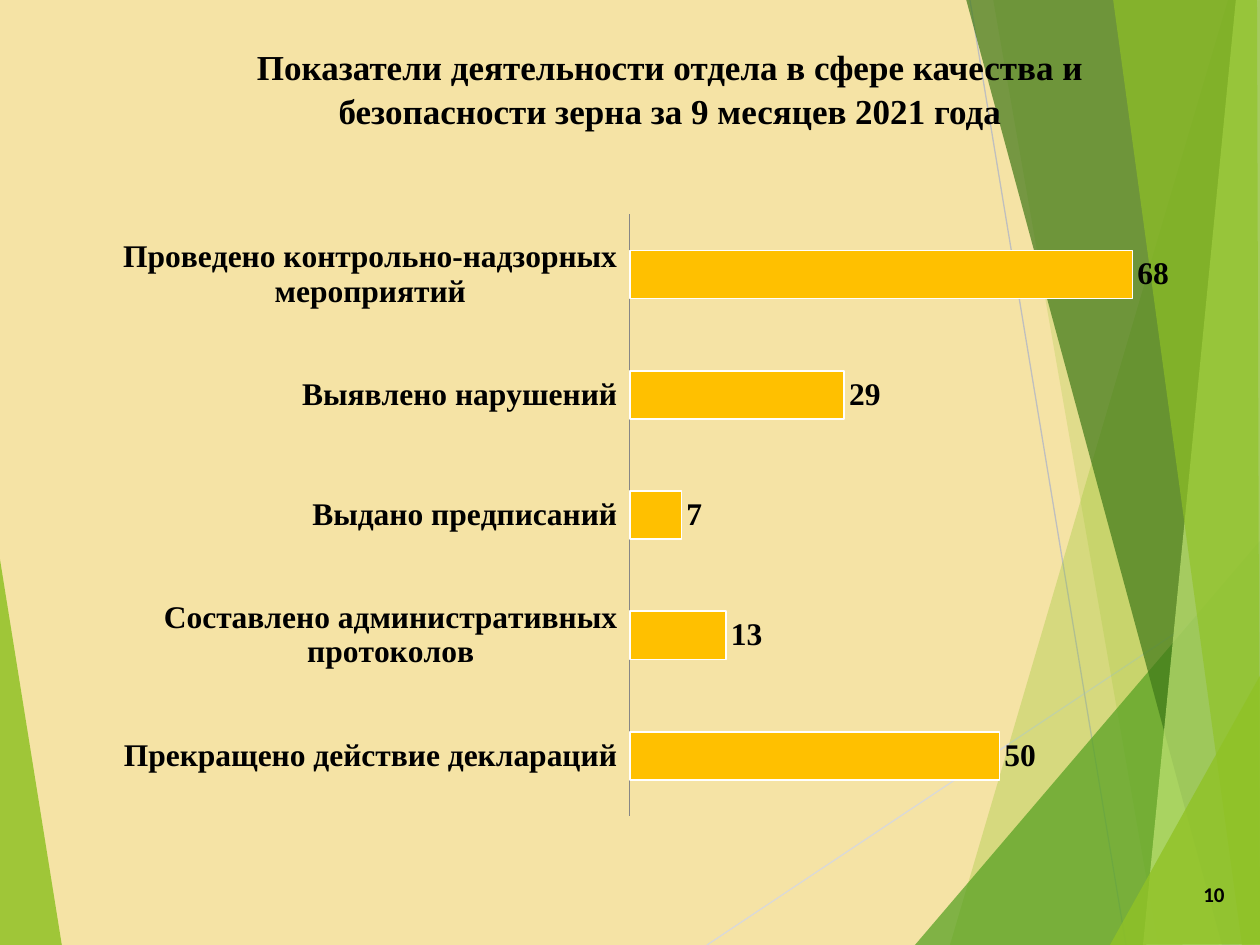
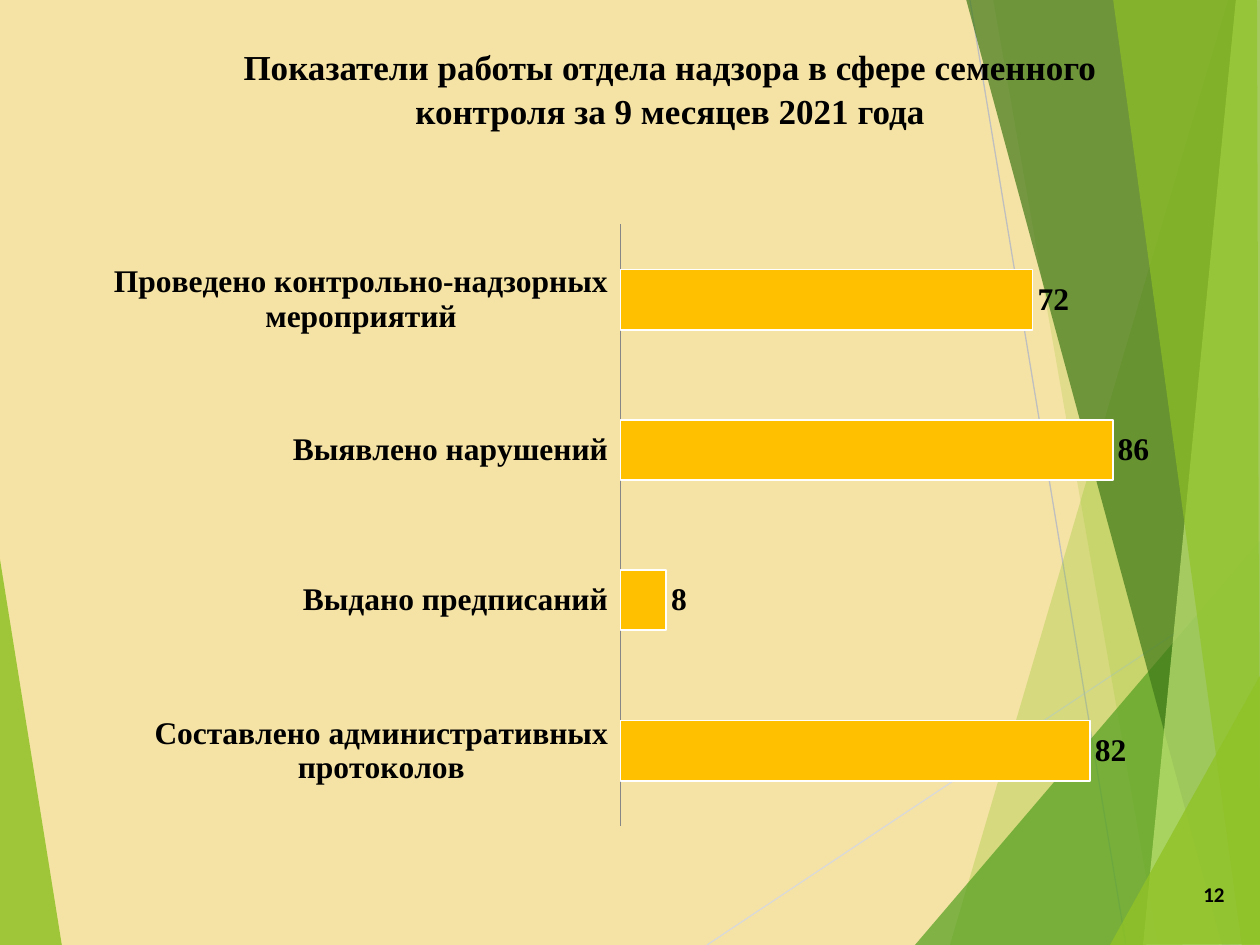
"""Build two slides of bar charts on a backdrop of green facets."""
from dataclasses import dataclass

from lxml import etree
from pptx import Presentation
from pptx.chart.data import CategoryChartData
from pptx.dml.color import RGBColor
from pptx.enum.chart import XL_CHART_TYPE, XL_LABEL_POSITION, XL_TICK_LABEL_POSITION, XL_TICK_MARK
from pptx.enum.shapes import MSO_CONNECTOR
from pptx.enum.text import MSO_ANCHOR, PP_ALIGN
from pptx.oxml import parse_xml
from pptx.oxml.ns import nsdecls, qn
from pptx.util import Pt

BAR = XL_CHART_TYPE.BAR_CLUSTERED
OUTSIDE = XL_LABEL_POSITION.OUTSIDE_END
NO_TICK = XL_TICK_MARK.NONE
LOW = XL_TICK_LABEL_POSITION.LOW
STRAIGHT = MSO_CONNECTOR.STRAIGHT
TOP, MIDDLE = MSO_ANCHOR.TOP, MSO_ANCHOR.MIDDLE
CENTER, RIGHT = PP_ALIGN.CENTER, PP_ALIGN.RIGHT


@dataclass(frozen=True)
class Theme:
    """Colours, fonts and type sizes."""
    background: str = "F5E3A5"
    ink: str = "000000"
    bar: str = "FFC000"
    bar_edge: str = "FFFFFF"
    axis: str = "868686"
    lime: str = "90C226"
    green: str = "54A021"
    forest: str = "3F7819"
    pale: str = "C0E474"
    serif: str = "Times New Roman"
    sans: str = "Calibri"
    title_size: int = 20
    chart_size: int = 18
    number_size: int = 12


THEME = Theme()
PX = 914400 / 126
WIDTH, HEIGHT = 1260, 945
TITLE_BOX = (163, 37, 1014, 185)
NUMBER_BOX = (1166, 869, 71, 50)
PLOT = {"x": 0.497, "y": 0.046, "w": 0.486, "h": 0.94}

INSPECTIONS = "Проведено контрольно-надзорных мероприятий"
VIOLATIONS = "Выявлено нарушений"
ORDERS = "Выдано предписаний"
PROTOCOLS = "Составлено административных протоколов"
DECLARATIONS = "Прекращено действие деклараций"

PAGES = [
    {
        "title": "Показатели деятельности отдела в сфере качества и "
                 "безопасности зерна за 9 месяцев 2021 года",
        "number": "10",
        "box": (25, 185, 1217, 640),
        "maximum": 80,
        "axis_width": 0.75,
        "values": {DECLARATIONS: 50, PROTOCOLS: 13, ORDERS: 7,
                   VIOLATIONS: 29, INSPECTIONS: 68},
    },
    {
        "title": "Показатели работы отдела надзора в сфере семенного "
                 "контроля за 9 месяцев 2021 года",
        "number": "12",
        "box": (35, 195, 1178, 640),
        "maximum": 100,
        "axis_width": 1,
        "values": {PROTOCOLS: 82, ORDERS: 8, VIOLATIONS: 86, INSPECTIONS: 72},
    },
]

LEFT_FACET = (THEME.lime, 85, [(-1, 553), (62, 946), (-1, 945)])
RAYS = [
    ("D9D9D9", (707, 945, 1261, 576)),
    ("BFBFBF", (970, 0, 1126, 945)),
]
RIGHT_FACETS = [
    (THEME.lime, 30, [(1228, 0), (950, 945), (1262, 946), (1261, 1)]),
    (THEME.lime, 20, [(993, -1), (1158, 945), (1261, 945), (1261, -1)]),
    (THEME.green, 72, [(915, 945), (1260, 541), (1261, 945)]),
    (THEME.forest, 70, [(966, -1), (1222, 945), (1261, 944), (1261, -1)]),
    (THEME.pale, 70, [(1236, -1), (1143, 945), (1261, 945), (1260, -1)]),
    (THEME.lime, 65, [(1113, -1), (1242, 945), (1260, 945), (1257, -1)]),
    (THEME.lime, 80, [(1110, 945), (1261, 674), (1261, 944)]),
]


def emu(*lengths):
    return [round(length * PX) for length in lengths]


def paint(fill, color):
    fill.solid()
    fill.fore_color.rgb = RGBColor.from_string(color)


def style_font(font, name, size):
    font.name = name
    font.size = Pt(size)
    font.bold = True
    font.color.rgb = RGBColor.from_string(THEME.ink)


def add_facet(page, color, opacity, points):
    builder = page.shapes.build_freeform(*points[0], scale=PX)
    builder.add_line_segments(points[1:], close=True)
    facet = builder.convert_to_shape()
    facet.shadow.inherit = False
    facet.line.fill.background()
    paint(facet.fill, color)
    tint = facet.fill._xPr.find(".//" + qn("a:srgbClr"))
    etree.SubElement(tint, qn("a:alpha")).set("val", str(opacity * 1000))


def add_ray(page, color, ends):
    ray = page.shapes.add_connector(STRAIGHT, *emu(*ends))
    ray.line.width = Pt(0.75)
    paint(ray.line.fill, color)
    etree.SubElement(ray.element.spPr, qn("a:effectLst"))


def add_backdrop(page):
    add_facet(page, *LEFT_FACET)
    for ray in RAYS:
        add_ray(page, *ray)
    for facet in RIGHT_FACETS:
        add_facet(page, *facet)


def add_text(page, bounds, text, name, size, align, anchor, spacing=1.0):
    frame = page.shapes.add_textbox(*emu(*bounds)).text_frame
    frame.word_wrap = True
    frame.vertical_anchor = anchor
    para = frame.paragraphs[0]
    para.text = text
    para.alignment = align
    para.line_spacing = spacing
    style_font(para.runs[0].font, name, size)


def place_plot(chart):
    space = chart.element.find(qn("c:chart"))
    clear = f'<c:spPr {nsdecls("c", "a")}><a:noFill/><a:ln><a:noFill/></a:ln></c:spPr>'
    space.addnext(parse_xml(clear))
    area = space.find(qn("c:plotArea"))
    for layout in area.findall(qn("c:layout")):
        area.remove(layout)
    modes = '<c:layoutTarget val="inner"/><c:xMode val="edge"/><c:yMode val="edge"/>'
    sides = "".join(f'<c:{side} val="{share}"/>' for side, share in PLOT.items())
    area.insert(0, parse_xml(
        f'<c:layout {nsdecls("c")}><c:manualLayout>{modes}{sides}</c:manualLayout></c:layout>'))


def add_bars(page, bounds, values, maximum, axis_width):
    data = CategoryChartData()
    data.categories = list(values)
    data.add_series("Series 1", list(values.values()))
    chart = page.shapes.add_chart(BAR, *emu(*bounds), data).chart
    chart.has_legend = False
    chart.has_title = False
    style_font(chart.font, THEME.serif, THEME.chart_size)
    place_plot(chart)

    value_axis = chart.value_axis
    value_axis.minimum_scale = 0
    value_axis.maximum_scale = maximum
    value_axis.has_major_gridlines = False
    value_axis.visible = False
    category_axis = chart.category_axis
    category_axis.major_tick_mark = NO_TICK
    category_axis.minor_tick_mark = NO_TICK
    category_axis.tick_label_position = LOW
    category_axis.format.line.width = Pt(axis_width)
    paint(category_axis.format.line.fill, THEME.axis)

    plot = chart.plots[0]
    plot.vary_by_categories = False
    plot.gap_width = 150
    plot.overlap = -25
    plot.has_data_labels = True
    plot.data_labels.show_value = True
    plot.data_labels.position = OUTSIDE
    style_font(plot.data_labels.font, THEME.serif, THEME.chart_size)
    bars = plot.series[0].format
    paint(bars.fill, THEME.bar)
    bars.line.width = Pt(1)
    paint(bars.line.fill, THEME.bar_edge)


def main():
    deck = Presentation()
    deck.slide_width, deck.slide_height = emu(WIDTH, HEIGHT)
    paint(deck.slide_master.background.fill, THEME.background)
    for content in PAGES:
        page = deck.slides.add_slide(deck.slide_layouts[6])
        add_backdrop(page)
        add_text(page, TITLE_BOX, content["title"], THEME.serif, THEME.title_size,
                 CENTER, TOP, 1.05)
        add_bars(page, content["box"], content["values"], content["maximum"],
                 content["axis_width"])
        add_text(page, NUMBER_BOX, content["number"], THEME.sans, THEME.number_size,
                 RIGHT, MIDDLE)
    deck.save("out.pptx")


if __name__ == "__main__":
    main()
